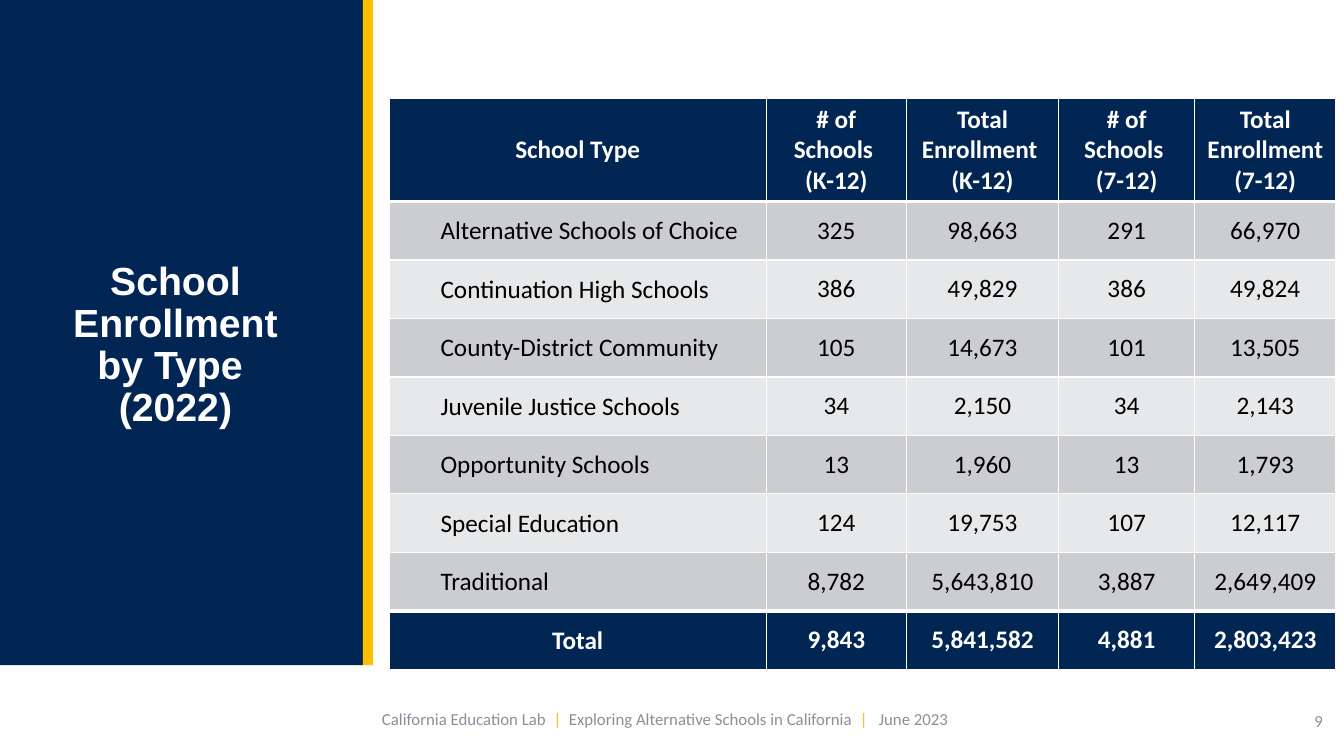
from pptx import Presentation
from pptx import util as u
from pptx.dml.color import RGBColor
from pptx.enum import shapes, text
from pptx.oxml import parse_xml
from pptx.oxml.ns import nsdecls

NAVY, GOLD, PAPER, BLACK = "012654", "FFBF00", "FFFEFF", "000000"
BANDS = ("CCCDD1", "E7E8E9")
FOOTER_GREY, FOOTER_GOLD = "8C8E99", "FDBE00"
PANEL_W, PANEL_H, STRIPE_W = 3.6, 6.6, 0.1

COL_WIDTHS = (3.74, 1.39, 1.51, 1.35, 1.4)
HEADER_H, ROW_H = 1.02, 0.58
THIN, THICK = 1, 3
ROWS = [
    ("School Type", "# of Schools \n(K-12)", "Total Enrollment \n(K-12)",
     "# of Schools \n(7-12)", "Total Enrollment (7-12)"),
    ("Alternative Schools of Choice", "325", "98,663", "291", "66,970"),
    ("Continuation High Schools", "386", "49,829", "386", "49,824"),
    ("County-District Community", "105", "14,673", "101", "13,505"),
    ("Juvenile Justice Schools", "34", "2,150", "34", "2,143"),
    ("Opportunity Schools", "13", "1,960", "13", "1,793"),
    ("Special Education", "124", "19,753", "107", "12,117"),
    ("Traditional", "8,782", "5,643,810", "3,887", "2,649,409"),
    ("Total", "9,843", "5,841,582", "4,881", "2,803,423"),
]


def paint(fmt, color):
    """Fill a shape, cell or background with one solid colour."""
    fmt.fill.solid()
    fmt.fill.fore_color.rgb = RGBColor.from_string(color)


def add_run(p, words, size, color, font="Calibri", bold=False):
    r = p.add_run()
    r.text = words
    r.font.name, r.font.size, r.font.bold = font, u.Pt(size), bold
    r.font.color.rgb = RGBColor.from_string(color)


def add_lines(tf, lines, align, **style):
    """Write each line as its own paragraph."""
    for i, line in enumerate(lines):
        p = tf.add_paragraph() if i else tf.paragraphs[0]
        p.alignment = align
        add_run(p, line, **style)


def add_bar(s, left, width):
    sp = s.shapes.add_shape(shapes.MSO_SHAPE.RECTANGLE, u.Inches(left), 0,
                            u.Inches(width), u.Inches(PANEL_H))
    sp.shadow.inherit = False
    paint(sp, NAVY if left == 0 else GOLD)
    sp.line.fill.background()


def add_footer(s, box, runs, align):
    tf = s.shapes.add_textbox(*map(u.Inches, box)).text_frame
    tf.word_wrap = True
    tf.vertical_anchor = text.MSO_ANCHOR.MIDDLE
    p = tf.paragraphs[0]
    p.alignment = align
    for words, color in runs:
        add_run(p, words, 12, color)


def set_title(s):
    title = s.shapes.title
    s.shapes._spTree.append(title._element)  # in front of the panel
    title.left, title.top, title.width, title.height = map(
        u.Inches, (0.24, 2.06, 3, 2.73))
    tf = title.text_frame
    tf.word_wrap, tf.auto_size = True, text.MSO_AUTO_SIZE.NONE
    tf.vertical_anchor = text.MSO_ANCHOR.MIDDLE
    tf.margin_left = tf.margin_right = u.Inches(0.4)
    tf.margin_top = tf.margin_bottom = 0
    add_lines(tf, ("School Enrollment by Type ", "(2022)"), text.PP_ALIGN.CENTER,
              size=28, color=PAPER, font="Arial", bold=True)
    for p in tf.paragraphs:
        p.line_spacing = u.Pt(30)
        p.space_before = u.Pt(0)


def set_borders(cell, top, bottom):
    tcPr = cell._tc.get_or_add_tcPr()
    for side, width in (("L", THIN), ("R", THIN), ("T", top), ("B", bottom)):
        tcPr.append(parse_xml(
            f'<a:ln{side} {nsdecls("a")} w="{u.Pt(width)}"><a:solidFill>'
            f'<a:srgbClr val="{PAPER}"/></a:solidFill></a:ln{side}>'))


def fill_cell(cell, words, row, col):
    last = len(ROWS) - 1
    strong = row in (0, last)
    set_borders(cell, THICK if row in (1, last) else THIN,
                THICK if row in (0, last - 1) else THIN)
    paint(cell, NAVY if strong else BANDS[(row - 1) % 2])
    cell.vertical_anchor = text.MSO_ANCHOR.MIDDLE
    is_name = col == 0 and not strong
    add_lines(cell.text_frame, words.split("\n"),
              text.PP_ALIGN.LEFT if is_name else text.PP_ALIGN.CENTER,
              size=18, color=PAPER if strong else BLACK, bold=strong)
    if col == 0 and row:
        cell.margin_left = cell.margin_right = cell.margin_top = u.Inches(0.01)
        cell.margin_bottom = 0
    if is_name:
        pPr = cell.text_frame.paragraphs[0]._p.get_or_add_pPr()
        pPr.set("lvl", "1")
        pPr.set("marL", str(u.Inches(0.5)))
        pPr.set("indent", "0")


def add_enrollment_table(s):
    height = HEADER_H + ROW_H * (len(ROWS) - 1)
    table = s.shapes.add_table(
        len(ROWS), len(COL_WIDTHS), u.Inches(3.86), u.Inches(0.98),
        u.Inches(sum(COL_WIDTHS)), u.Inches(height)).table
    for column, width in zip(table.columns, COL_WIDTHS):
        column.width = u.Inches(width)
    for i, values in enumerate(ROWS):
        table.rows[i].height = u.Inches(ROW_H if i else HEADER_H)
        for j, words in enumerate(values):
            fill_cell(table.cell(i, j), words, i, j)


def main():
    prs = Presentation()
    prs.slide_width, prs.slide_height = u.Inches(13.33), u.Inches(7.5)
    s = prs.slides.add_slide(prs.slide_layouts[5])
    paint(s.background, PAPER)

    # Side panel with title
    add_bar(s, 0, PANEL_W)
    add_bar(s, PANEL_W, STRIPE_W)
    set_title(s)

    # Enrollment figures
    add_enrollment_table(s)

    # Footer and page number
    divider = ("|", FOOTER_GOLD)
    add_footer(s, (3.69, 6.93, 5.95, 0.4), (
        ("California Education Lab  ", FOOTER_GREY), divider,
        ("  Exploring Alternative Schools in California  ", FOOTER_GREY), divider,
        ("   June 2023", FOOTER_GREY)), text.PP_ALIGN.LEFT)
    add_footer(s, (10.22, 6.95, 3, 0.4), [("9", FOOTER_GREY)], text.PP_ALIGN.RIGHT)

    prs.save("out.pptx")


if __name__ == "__main__":
    main()
